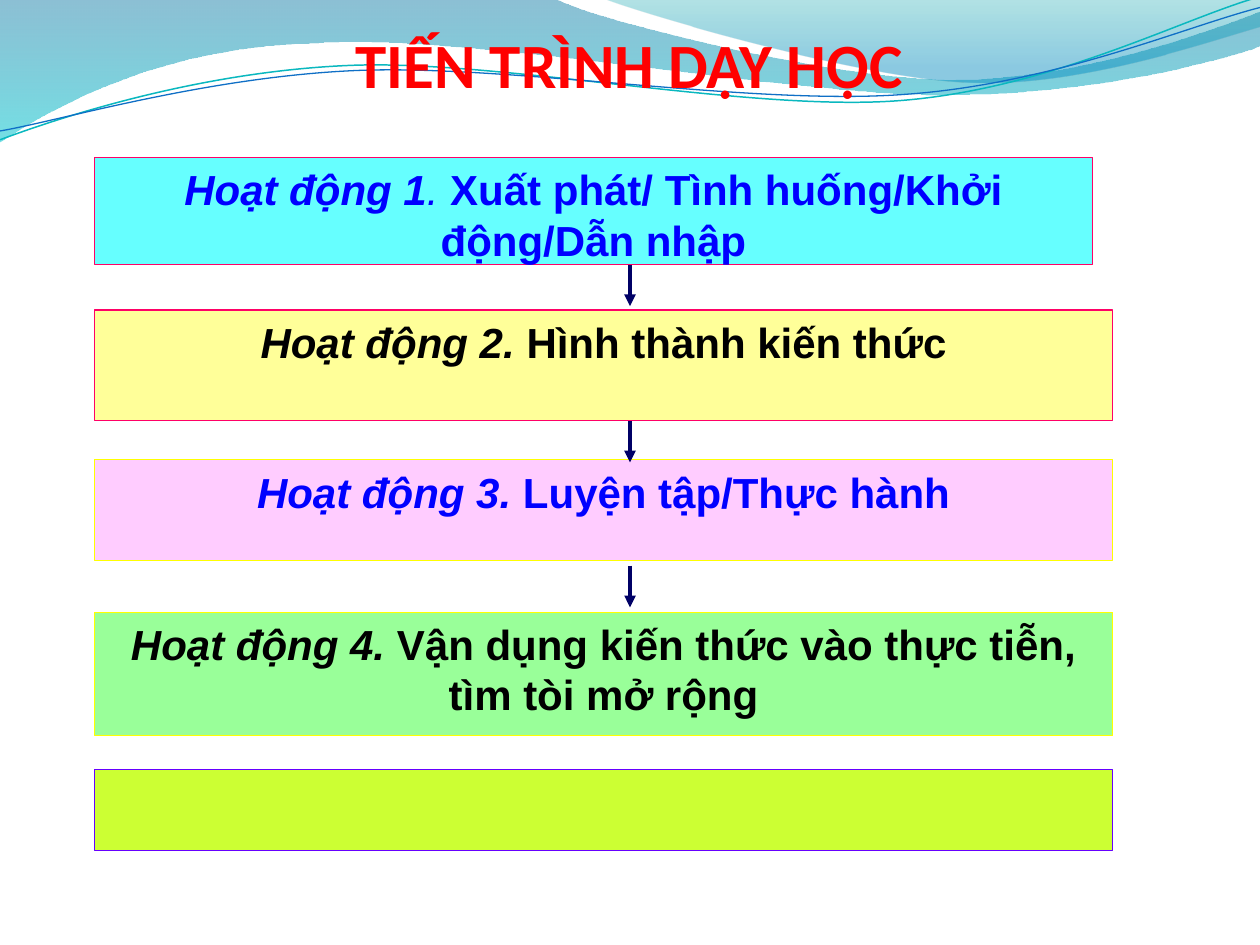
import math

from lxml import etree
from pptx import Presentation
from pptx.dml.color import RGBColor
from pptx.enum.shapes import MSO_CONNECTOR, MSO_SHAPE
from pptx.enum.text import MSO_ANCHOR, PP_ALIGN
from pptx.oxml.ns import qn
from pptx.util import Inches, Pt

STRAIGHT = MSO_CONNECTOR.STRAIGHT
RECTANGLE = MSO_SHAPE.RECTANGLE
CENTER = PP_ALIGN.CENTER
TOP, BOTTOM = MSO_ANCHOR.TOP, MSO_ANCHOR.BOTTOM

# Waves: start point, then line ends (2 numbers) and cubic curves (6 numbers)
LEFT_WAVE = [
    (0, 0), (4.4, -0.01), (4.76, 0.17, 6.64, 0.63, 7.58, 0.63),
    (8.53, 0.63, 9.58, 0.26, 10, 0.09), (10.01, 0.36),
    (9.83, 0.44, 8.7, 0.76, 7.46, 0.75), (6.22, 0.75, 3.82, 0.28, 2.57, 0.34),
    (1.29, 0.36, 0.46, 0.83, -0.01, 1.13), (0, 0)]
RIGHT_WAVE = [
    (4.79, -0.01), (5.09, 0.11, 6.82, 0.62, 7.69, 0.65),
    (8.56, 0.69, 9.61, 0.32, 10, 0.21), (10, 0), (4.79, -0.01)]
TEAL_CURVE = [
    (0, 1.11), (0.48, 0.93, 1.58, 0.57, 2.77, 0.52),
    (3.95, 0.47, 5.93, 0.89, 7.13, 0.8), (8.33, 0.71, 9.38, 0.15, 9.98, -0.02)]
BLUE_CURVE = [
    (0, 1.04), (0.47, 0.96, 1.64, 0.61, 2.83, 0.56),
    (4.03, 0.51, 5.97, 0.84, 7.17, 0.75), (8.36, 0.67, 9.41, 0.21, 10, 0.06)]
CURVE_TILT = 2.7
CURVE_CENTER = (5, 0.58)

# Activities: top, width, height, fill, line, text colour, runs (text, bold, italic)
ACTIVITIES = [
    (1.25, 7.92, 0.85, "66FFFF", "FF0066", "0000FF",
     [("Hoạt động 1", True, True), (". ", False, True),
      ("Xuất phát/ Tình huống/Khởi động/Dẫn nhập", True, False)]),
    (2.46, 8.08, 0.88, "FFFF99", "FF0066", "000000",
     [("Hoạt động 2. ", True, True), ("Hình thành kiến thức", True, False)]),
    (3.65, 8.08, 0.8, "FFCCFF", "FFFF00", "0000FF",
     [("Hoạt động 3. ", True, True), ("Luyện tập/Thực hành", True, False)]),
    (4.86, 8.08, 0.98, "99FF99", "FFFF00", "000000",
     [("Hoạt động 4. ", True, True),
      ("Vận dụng kiến thức vào thực tiễn, tìm tòi mở rộng", True, False)]),
    (6.11, 8.08, 0.64, "CCFF33", "6600FF", "000000", []),
]
ARROW_TOPS = [2.1, 3.34, 4.49]


def color(hex_string):
    return RGBColor.from_string(hex_string)


def format_run(run, font_name, size, hex_string, bold=True, italic=False):
    font = run.font
    font.name, font.size = font_name, Pt(size)
    font.bold, font.italic = bold, italic
    font.color.rgb = color(hex_string)


def level(x, y):
    """Turn a point of a tilted curve back to its level position."""
    angle = math.radians(CURVE_TILT)
    center_x, center_y = CURVE_CENTER
    dx, dy = x - center_x, y - center_y
    return (center_x + dx * math.cos(angle) - dy * math.sin(angle),
            center_y + dx * math.sin(angle) + dy * math.cos(angle))


def add_path(slide, left, top, path, close=False, tilted=False):
    segments = []
    for numbers in path:
        points = list(zip(numbers[::2], numbers[1::2]))
        if tilted:
            points = [level(x, y) for x, y in points]
        segments.append([(Inches(left + x), Inches(top + y)) for x, y in points])
    ends = [points[-1] for points in segments]
    builder = slide.shapes.build_freeform(*ends[0])
    builder.add_line_segments(ends[1:], close=close)
    shape = builder.convert_to_shape()
    shape.shadow.inherit = False
    # Bend the straight segments that have control points
    lines = list(shape._element.spPr.iter(qn("a:lnTo")))
    for line, points in zip(lines, segments[1:]):
        if len(points) == 3:
            line.tag = qn("a:cubicBezTo")
            line.clear()
            for x, y in points:
                etree.SubElement(line, qn("a:pt"),
                                 x=str(x - shape.left), y=str(y - shape.top))
    if tilted:
        shape.rotation = 360 - CURVE_TILT
    return shape


def add_wave(slide, left, top, path, stops):
    shape = add_path(slide, left, top, path, close=True)
    shape.line.fill.background()
    shape.fill.gradient()
    shape.fill.gradient_angle = 270
    for stop, (position, hex_string, _) in zip(shape.fill.gradient_stops, stops):
        stop.position = position
        stop.color.rgb = color(hex_string)
    # Opacity of each gradient stop
    fill_colors = shape._element.spPr.find(qn("a:gradFill")).iter(qn("a:srgbClr"))
    for fill_color, (_, _, opacity) in zip(fill_colors, stops):
        etree.SubElement(fill_color, qn("a:alpha"), val=str(opacity * 1000))


def add_curve(slide, left, top, path, hex_string, width):
    shape = add_path(slide, left, top, path, tilted=True)
    shape.fill.background()
    shape.line.color.rgb = color(hex_string)
    shape.line.width = Pt(width)


def add_header(slide, left, top):
    add_wave(slide, left, top, LEFT_WAVE, [(0, "0074A1", 45), (1, "00C6CF", 55)])
    add_wave(slide, left, top, RIGHT_WAVE, [(0, "00A1A9", 30), (0.8, "008BBF", 45)])
    add_curve(slide, left, top, TEAL_CURVE, "0AB8BF", 0.85)
    add_curve(slide, left, top, BLUE_CURVE, "0F6FC6", 0.75)


def add_title(slide, left, top, width, height):
    box = slide.shapes.add_textbox(Inches(left), Inches(top), Inches(width), Inches(height))
    frame = box.text_frame
    frame.text = "TIẾN TRÌNH DẠY HỌC"
    frame.word_wrap = True
    frame.vertical_anchor = BOTTOM
    frame.margin_left = frame.margin_right = frame.margin_bottom = 0
    frame.margin_top = Inches(0.05)
    paragraph = frame.paragraphs[0]
    paragraph.alignment = CENTER
    format_run(paragraph.runs[0], "Calibri", 36, "FF0000")


def add_activity(slide, left, top, width, height, fill, line, text_color, runs):
    shape = slide.shapes.add_shape(
        RECTANGLE, Inches(left), Inches(top), Inches(width), Inches(height))
    shape.shadow.inherit = False
    shape.fill.solid()
    shape.fill.fore_color.rgb = color(fill)
    shape.line.color.rgb = color(line)
    shape.line.width = Pt(0.75)
    shape.text_frame.word_wrap = True
    shape.text_frame.vertical_anchor = TOP
    paragraph = shape.text_frame.paragraphs[0]
    paragraph.alignment = CENTER
    paragraph.space_after = Pt(4.5)
    for text, bold, italic in runs:
        run = paragraph.add_run()
        run.text = text
        format_run(run, "Arial", 24, text_color, bold, italic)


def add_arrow(slide, x, top, length):
    arrow = slide.shapes.add_connector(
        STRAIGHT, Inches(x), Inches(top), Inches(x), Inches(top + length))
    arrow.line.color.rgb = color("000066")
    arrow.line.width = Pt(2.25)
    etree.SubElement(arrow.line._get_or_add_ln(), qn("a:tailEnd"), type="triangle")
    etree.SubElement(arrow._element.spPr, qn("a:effectLst"))


def add_process(slide, left, arrow_x):
    for top, *activity in ACTIVITIES:
        add_activity(slide, left, top, *activity)
    for top in ARROW_TOPS:
        add_arrow(slide, arrow_x, top, 0.33)


def main():
    presentation = Presentation()
    presentation.slide_width, presentation.slide_height = Inches(10), Inches(7.5)
    slide = presentation.slides.add_slide(presentation.slide_layouts[6])
    add_header(slide, 0, 0)
    add_process(slide, 0.75, 5)
    add_title(slide, 1.62, 0.33, 6.75, 0.47)
    presentation.save("out.pptx")


if __name__ == "__main__":
    main()
